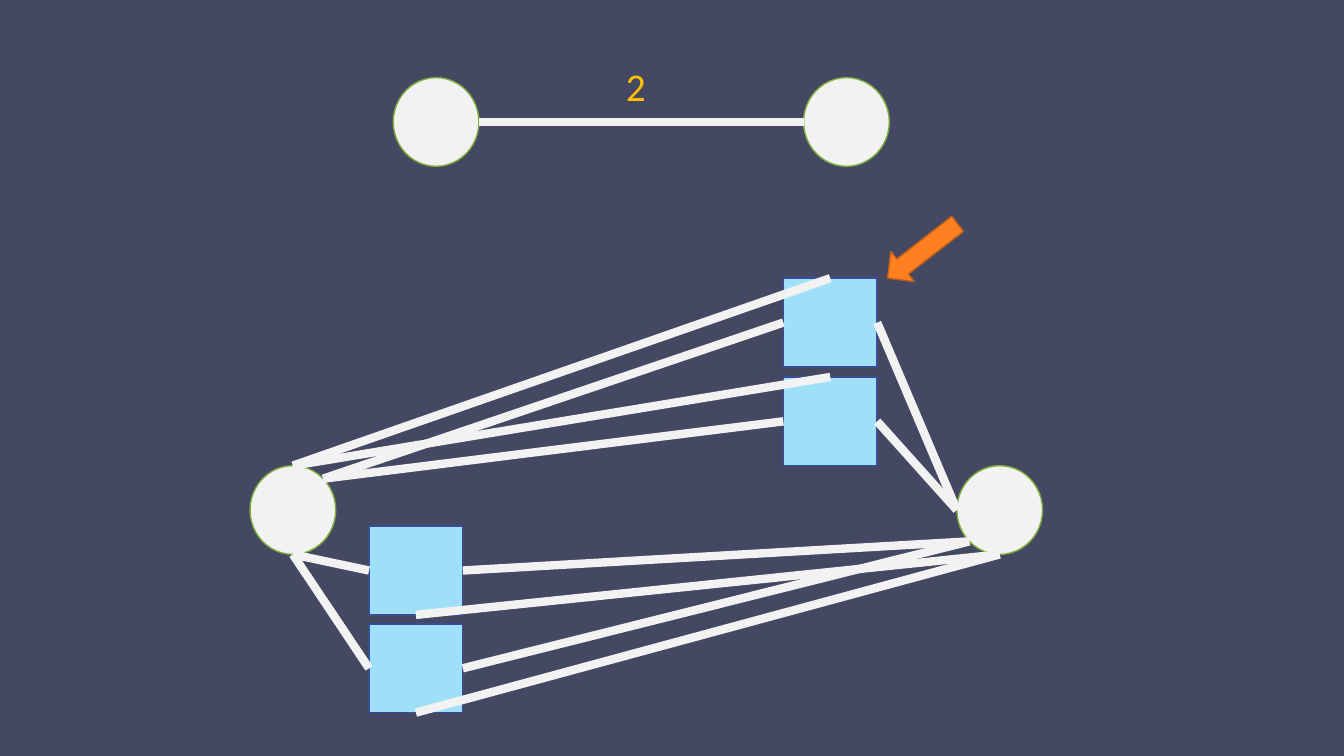
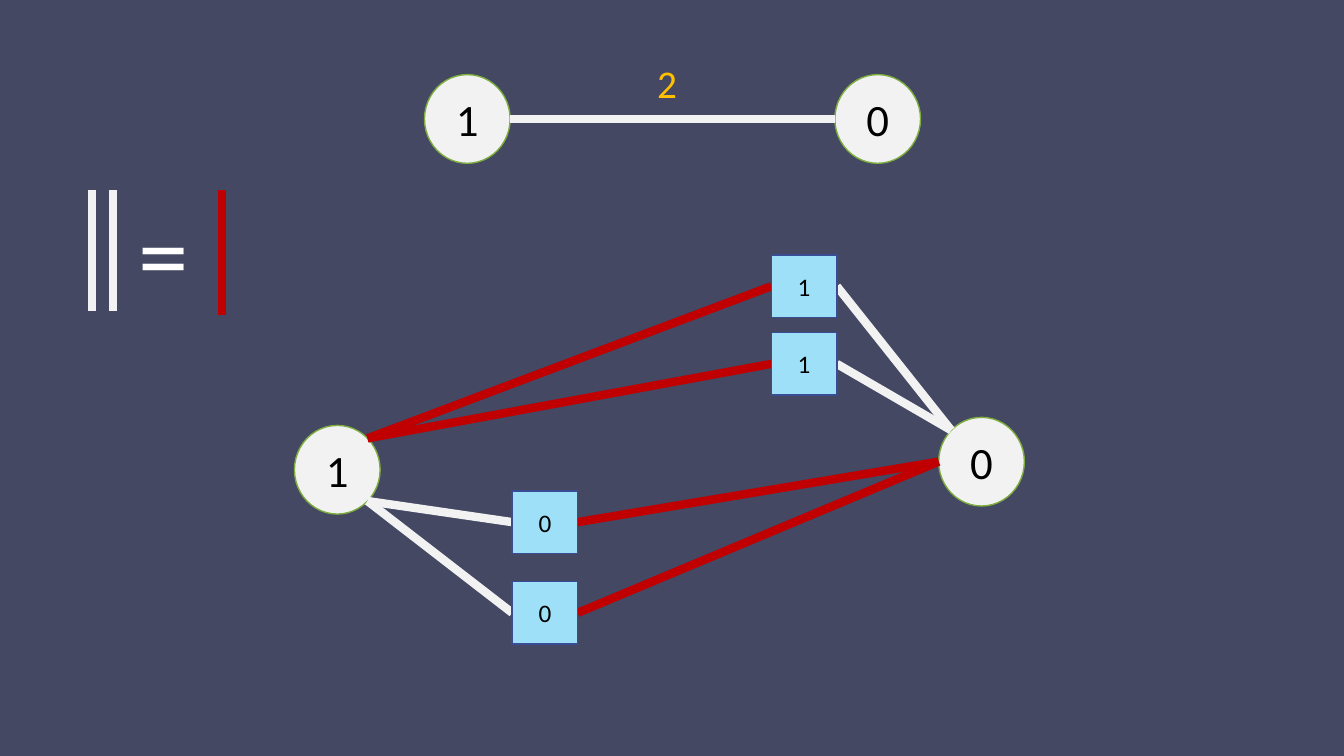
from math import cos, radians, sin

from lxml.etree import SubElement
from pptx import Presentation
from pptx.dml.color import RGBColor
from pptx.enum.shapes import MSO_CONNECTOR, MSO_SHAPE
from pptx.enum.text import MSO_ANCHOR, MSO_AUTO_SIZE, PP_ALIGN
from pptx.oxml.ns import qn
from pptx.util import Emu, Pt

BACKGROUND = RGBColor(0x44, 0x48, 0x63)
LIGHT = RGBColor(0xF2, 0xF2, 0xF2)
WHITE = RGBColor(0xFF, 0xFF, 0xFF)
BLACK = RGBColor(0x00, 0x00, 0x00)
GREEN = RGBColor(0x7C, 0xAD, 0x3D)
SKY = RGBColor(0x9E, 0xE0, 0xF8)
NAVY = RGBColor(0x3A, 0x4C, 0x94)
ORANGE = RGBColor(0xFF, 0x80, 0x21)
BROWN = RGBColor(0xBD, 0x5F, 0x18)
AMBER = RGBColor(0xFF, 0xC0, 0x00)
RED = RGBColor(0xC0, 0x00, 0x00)

FONT = "Calibri"
SCALE = 9144
NODE_WIDTH, NODE_HEIGHT = 85, 88

TOP, LEFT, BOTTOM_LEFT, BOTTOM = 0, 90, 135, 180
BOTTOM_RIGHT, RIGHT, TOP_RIGHT = 225, 270, 315


def px(value):
    return Emu(round(value * SCALE))


def write_text(frame, text, *, size, color, align=PP_ALIGN.LEFT):
    paragraph = frame.paragraphs[0]
    paragraph.alignment = align
    run = paragraph.add_run()
    run.text = text
    run.font.name = FONT
    run.font.size = Pt(size)
    run.font.color.rgb = color


def site_point(shape, angle):
    x = shape.left + shape.width / 2 * (1 - sin(radians(angle)))
    y = shape.top + shape.height / 2 * (1 - cos(radians(angle)))
    return round(x), round(y)


def glue(connection, shape, angle):
    step = 45 if shape.auto_shape_type == MSO_SHAPE.OVAL else 90
    connection.id = shape.shape_id
    connection.idx = angle // step


class Diagram:
    def __init__(self):
        self.presentation = Presentation()
        self.presentation.slide_width = px(1333)
        self.presentation.slide_height = px(750)
        fill = self.presentation.slide_master.background.fill
        fill.solid()
        fill.fore_color.rgb = BACKGROUND
        self.slide = None

    def new_slide(self):
        layout = self.presentation.slide_layouts[6]
        self.slide = self.presentation.slides.add_slide(layout)

    def shape(self, kind, left, top, width, height, fill, outline, text="", size=18):
        shape = self.slide.shapes.add_shape(kind, px(left), px(top), px(width), px(height))
        shape.shadow.inherit = False
        shape.fill.solid()
        shape.fill.fore_color.rgb = fill
        shape.line.color.rgb = outline
        shape.line.width = Pt(1)
        if text:
            shape.text_frame.vertical_anchor = MSO_ANCHOR.MIDDLE
            write_text(shape.text_frame, text, size=size, color=BLACK, align=PP_ALIGN.CENTER)
        return shape

    def node(self, left, top, text=""):
        return self.shape(MSO_SHAPE.OVAL, left, top, NODE_WIDTH, NODE_HEIGHT,
                          LIGHT, GREEN, text, 32)

    def square(self, left, top, width, height, text=""):
        return self.shape(MSO_SHAPE.RECTANGLE, left, top, width, height, SKY, NAVY, text)

    def arrow(self, left, top, width, height, rotation):
        arrow = self.shape(MSO_SHAPE.UP_ARROW, left, top, width, height, ORANGE, BROWN)
        arrow.rotation = rotation

    def label(self, text, left, top, width, height, size, color, wrap=True):
        box = self.slide.shapes.add_textbox(px(left), px(top), px(width), px(height))
        box.text_frame.word_wrap = wrap
        box.text_frame.auto_size = MSO_AUTO_SIZE.SHAPE_TO_FIT_TEXT
        write_text(box.text_frame, text, size=size, color=color)

    def line(self, start, end, color=LIGHT):
        connector = self.slide.shapes.add_connector(MSO_CONNECTOR.STRAIGHT, *start, *end)
        connector.line.color.rgb = color
        connector.line.width = Pt(6)
        SubElement(connector.element.spPr, qn("a:effectLst"))
        return connector

    def link(self, start, start_site, end, end_site, color=LIGHT, behind=False):
        connector = self.line(site_point(start, start_site), site_point(end, end_site), color)
        properties = connector.element.nvCxnSpPr.cNvCxnSpPr
        glue(properties.get_or_add_stCxn(), start, start_site)
        glue(properties.get_or_add_endCxn(), end, end_site)
        if behind:
            end.element.addprevious(connector.element)

    def bar(self, x, top, bottom, color=LIGHT):
        self.line((px(x), px(top)), (px(x), px(bottom)), color)

    def weighted_edge(self, left, top, first="", second=""):
        start = self.node(left, top, first)
        end = self.node(left + 407, top, second)
        self.link(start, RIGHT, end, LEFT)
        self.label("2", left + 221, top - 20, 56, 57, 28, AMBER)


def build_parallel_links(diagram):
    diagram.new_slide()
    diagram.weighted_edge(390, 77)
    left_node = diagram.node(248, 462)
    right_node = diagram.node(949, 462)
    lower = [diagram.square(366, top, 93, 88) for top in (522, 619)]
    upper = [diagram.square(777, top, 93, 88) for top in (276, 374)]
    for square in upper:
        diagram.link(right_node, LEFT, square, RIGHT)
        diagram.link(left_node, TOP, square, TOP)
        diagram.link(left_node, TOP_RIGHT, square, LEFT)
    for square in lower:
        diagram.link(left_node, BOTTOM, square, LEFT)
        diagram.link(right_node, BOTTOM_LEFT, square, RIGHT)
        diagram.link(right_node, BOTTOM, square, BOTTOM)
    diagram.arrow(896, 205, 38, 88, 232.2)


def build_merged_links(diagram):
    diagram.new_slide()
    diagram.weighted_edge(421, 74, "1", "0")
    left_node = diagram.node(292, 422, "1")
    right_node = diagram.node(931, 414, "0")
    for top in (253, 330):
        square = diagram.square(765, top, 65, 62, "1")
        diagram.link(right_node, TOP_LEFT, square, RIGHT, behind=True)
        diagram.link(left_node, TOP_RIGHT, square, LEFT, RED, behind=True)
    for top in (487, 577):
        square = diagram.square(508, top, 65, 62, "0")
        diagram.link(left_node, BOTTOM_RIGHT, square, LEFT, behind=True)
        diagram.link(right_node, LEFT, square, RIGHT, RED, behind=True)
    for x in (91, 112):
        diagram.bar(x, 189, 309)
    diagram.label("=", 128, 184, 71, 131, 72, WHITE, wrap=False)
    diagram.bar(220, 189, 313, RED)


TOP_LEFT = 45


def main():
    diagram = Diagram()
    build_parallel_links(diagram)
    build_merged_links(diagram)
    diagram.presentation.save("out.pptx")


if __name__ == "__main__":
    main()
